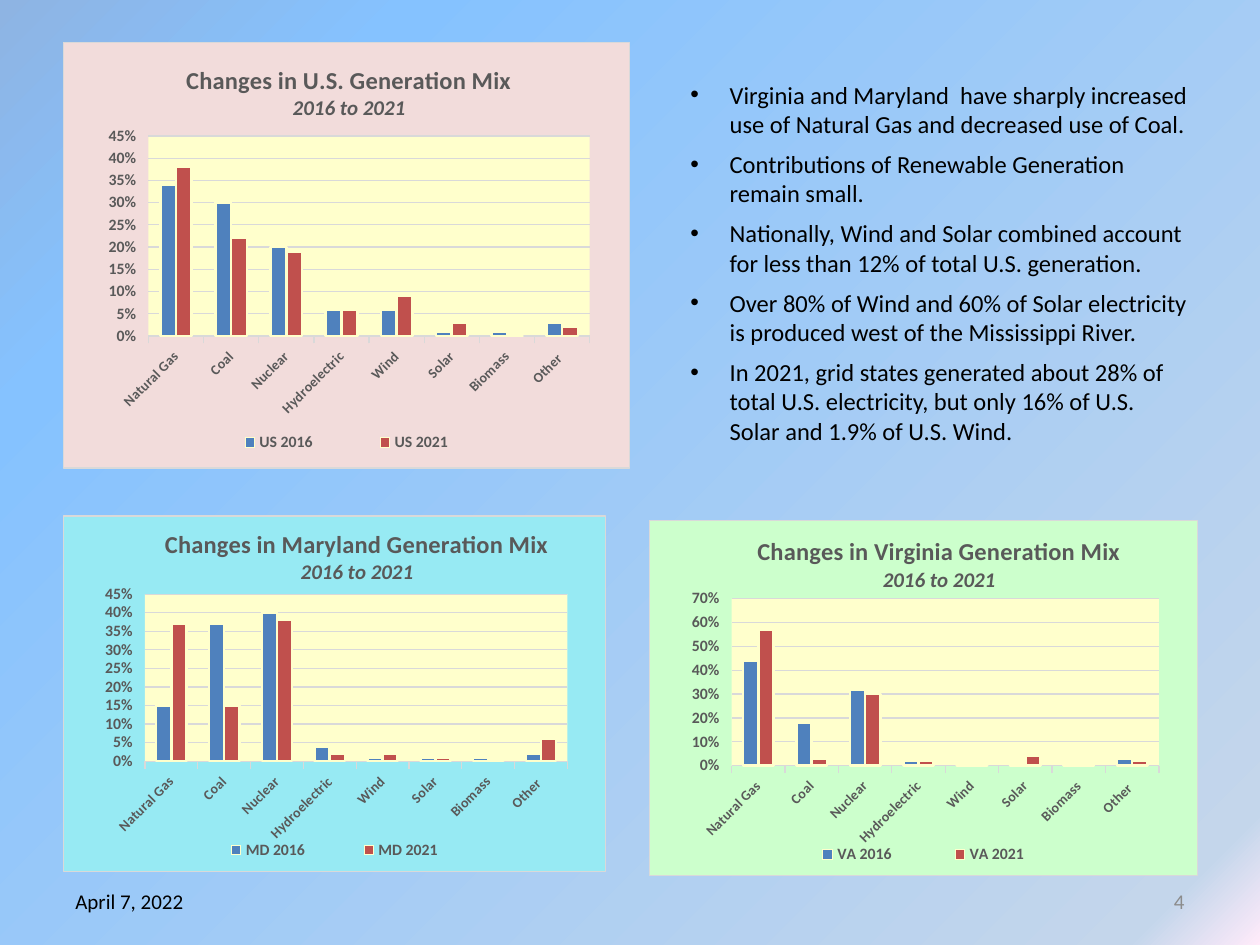
from typing import NamedTuple

from lxml import etree
from pptx import Presentation
from pptx.chart.data import CategoryChartData
from pptx.dml.color import RGBColor
from pptx.enum.chart import XL_CHART_TYPE, XL_LEGEND_POSITION, XL_TICK_MARK
from pptx.enum.text import MSO_ANCHOR, MSO_AUTO_SIZE, PP_ALIGN
from pptx.oxml import parse_xml
from pptx.oxml.ns import nsdecls, qn
from pptx.util import Cm, Pt

COLUMNS = XL_CHART_TYPE.COLUMN_CLUSTERED
LEGEND_BOTTOM = XL_LEGEND_POSITION.BOTTOM
TICK_OUT = XL_TICK_MARK.OUTSIDE
MIDDLE = MSO_ANCHOR.MIDDLE
GROW = MSO_AUTO_SIZE.SHAPE_TO_FIT_TEXT
LEFT, RIGHT = PP_ALIGN.LEFT, PP_ALIGN.RIGHT

FONT = "Calibri"
COLORS = {
    "text": "000000", "muted": "8C8C8C", "label": "595959", "rule": "D9D9D9",
    "plot": "FFFFCC", "before": "4F81BD", "after": "C0504D",
    "us": "F2DCDB", "maryland": "97EAF3", "virginia": "CCFFCC",
}
BACKGROUND = [(0, "8EB4E3"), (19, "85C2FF"), (94, "C4D6EB"), (100, "FFEBFA")]
SOURCES = ["Natural Gas", "Coal", "Nuclear", "Hydroelectric", "Wind", "Solar",
           "Biomass", "Other "]
BULLETS = [
    "Virginia and Maryland  have sharply increased use of Natural Gas and decreased use of Coal.",
    "Contributions of Renewable Generation remain small.",
    "Nationally, Wind and Solar combined account for less than 12% of total U.S. generation.",
    "Over 80% of Wind and 60% of Solar electricity is produced west of the Mississippi River.",
    "In 2021, grid states generated about 28% of total U.S. electricity, "
    "but only 16% of U.S. Solar and 1.9% of U.S. Wind.",
]


class Box(NamedTuple):
    """Left, top, width and height in centimetres."""
    x: float
    y: float
    w: float
    h: float

    def lengths(self) -> list:
        return [Cm(v) for v in self]


class MixChart(NamedTuple):
    region: str
    prefix: str
    box: Box
    fill: str
    title_at: tuple
    axis_max: float
    axis_step: float
    before: list
    after: list


CHARTS = [
    MixChart("U.S.", "US", Box(1.27, 0.84, 11.43, 8.61), "us", (0.21, 0.04), 0.45, 0.05,
             [0.34, 0.3, 0.2, 0.06, 0.06, 0.01, 0.01, 0.03],
             [0.38, 0.22, 0.19, 0.06, 0.09, 0.03, 0, 0.02]),
    MixChart("Maryland", "MD", Box(1.27, 10.39, 10.95, 7.19), "maryland", (0.18, 0.02), 0.45, 0.05,
             [0.15, 0.37, 0.4, 0.04, 0.01, 0.01, 0.01, 0.02],
             [0.37, 0.15, 0.38, 0.02, 0.02, 0.01, 0, 0.06]),
    MixChart("Virginia", "VA", Box(13.08, 10.48, 11.07, 7.19), "virginia", (0.19, 0.03), 0.7, 0.1,
             [0.44, 0.18, 0.32, 0.02, 0, 0, 0.01, 0.03],
             [0.57, 0.03, 0.3, 0.02, 0, 0.04, 0.01, 0.02]),
]


def rgb(name: str) -> RGBColor:
    return RGBColor.from_string(COLORS[name])


def style(font, size: float, color: str, bold: bool = False) -> None:
    font.name, font.size, font.bold = FONT, Pt(size), bold
    font.color.rgb = rgb(color)


def rule(line, color: str = "rule", width: float = 0.75) -> None:
    line.color.rgb = rgb(color)
    line.width = Pt(width)


def set_layout(parent, inner: bool = False, **fractions: float) -> None:
    """Place a chart part at fractions of the chart area."""
    for old in parent.findall(qn("c:layout")):
        parent.remove(old)
    layout = etree.Element(qn("c:layout"))
    manual = etree.SubElement(layout, qn("c:manualLayout"))
    if inner:
        etree.SubElement(manual, qn("c:layoutTarget")).set("val", "inner")
    for key in ("xMode", "yMode"):
        etree.SubElement(manual, qn(f"c:{key}")).set("val", "edge")
    for key, value in fractions.items():
        etree.SubElement(manual, qn(f"c:{key}")).set("val", str(value))
    overlay = parent.find(qn("c:overlay"))
    if overlay is None:
        parent.insert(0, layout)
    else:
        overlay.addprevious(layout)


def area_format(fill: str, border: str = ""):
    """Shape properties for a chart area or plot area."""
    line = f'<a:solidFill><a:srgbClr val="{border}"/></a:solidFill>' if border else "<a:noFill/>"
    return parse_xml(
        f'<c:spPr {nsdecls("c", "a")}><a:solidFill><a:srgbClr val="{fill}"/></a:solidFill>'
        f'<a:ln w="{Pt(0.75)}">{line}</a:ln></c:spPr>')


def add_mix_chart(s, mix: MixChart) -> None:
    data = CategoryChartData(number_format="0%")
    data.categories = SOURCES
    data.add_series(f"{mix.prefix} 2016", mix.before)
    data.add_series(f"{mix.prefix} 2021", mix.after)
    chart = s.shapes.add_chart(COLUMNS, *mix.box.lengths(), data).chart
    style(chart.font, 10, "text")

    # Title
    tf = chart.chart_title.text_frame
    tf.text = f"Changes in {mix.region} Generation Mix"
    style(tf.paragraphs[0].runs[0].font, 14, "label", True)
    r = tf.add_paragraph().add_run()
    r.text = "2016 to 2021"
    style(r.font, 12, "label", True)
    r.font.italic = True
    chart.chart_title.include_in_layout = False
    x, y = mix.title_at
    set_layout(chart.chart_title._element, x=x, y=y)

    # Columns
    plot = chart.plots[0]
    plot.gap_width, plot.overlap, plot.vary_by_categories = 150, 0, False
    for series, color in zip(plot.series, ("before", "after")):
        series.format.fill.solid()
        series.format.fill.fore_color.rgb = rgb(color)
        rule(series.format.line, "plot", 1.5)

    # Axes
    cat, val = chart.category_axis, chart.value_axis
    for axis, size in ((cat, 8), (val, 9)):
        axis.major_tick_mark = TICK_OUT
        style(axis.tick_labels.font, size, "label", True)
    rule(cat.format.line)
    cat._element.find(qn("c:txPr")).find(qn("a:bodyPr")).set("rot", "-2700000")
    val.minimum_scale, val.maximum_scale, val.major_unit = 0, mix.axis_max, mix.axis_step
    val.tick_labels.number_format = "0%"
    val.tick_labels.number_format_is_linked = False
    val.format.line.fill.background()
    rule(val.major_gridlines.format.line)

    # Legend
    chart.has_legend = True
    chart.legend.position = LEGEND_BOTTOM
    chart.legend.include_in_layout = False
    style(chart.legend.font, 9, "label", True)
    set_layout(chart.legend._element, x=0.21, y=0.9, w=0.58, h=0.08)

    # Backgrounds and plot position
    space = chart._chartSpace
    space.chart.addnext(area_format(COLORS[mix.fill], COLORS["rule"]))
    plot_area = space.chart.plotArea
    plot_area.append(area_format(COLORS["plot"]))
    set_layout(plot_area, inner=True, x=0.15, y=0.22, w=0.78, h=0.47)


def add_footer(s, text: str, box: Box, color: str, align) -> None:
    tf = s.shapes.add_textbox(*box.lengths()).text_frame
    tf.word_wrap, tf.vertical_anchor = True, MIDDLE
    tf.text = text
    p = tf.paragraphs[0]
    p.alignment = align
    style(p.runs[0].font, 12, color)


def add_bullets(s, items: list, box: Box) -> None:
    tf = s.shapes.add_textbox(*box.lengths()).text_frame
    tf.word_wrap, tf.auto_size = True, GROW
    tf.text = "\n".join(items)
    for p in tf.paragraphs:
        p.space_after = Pt(6)
        pr = p._p.get_or_add_pPr()
        pr.set("marL", str(Cm(0.79)))
        pr.set("indent", str(-Cm(0.79)))
        etree.SubElement(pr, qn("a:buFont")).set("typeface", "Arial")
        etree.SubElement(pr, qn("a:buChar")).set("char", "•")
        style(p.runs[0].font, 14, "text")


def set_background(s) -> None:
    fill = s.background.fill
    fill.gradient()
    stops = s._element.find(".//" + qn("a:gsLst"))
    stops.getparent().find(qn("a:lin")).set("ang", "2700000")
    for old in list(stops):
        stops.remove(old)
    for percent, color in BACKGROUND:
        stop = etree.SubElement(stops, qn("a:gs"), pos=str(percent * 1000))
        etree.SubElement(stop, qn("a:srgbClr"), val=color)


def main() -> None:
    prs = Presentation()
    prs.slide_width, prs.slide_height = Cm(25.4), Cm(19.05)
    s = prs.slides.add_slide(prs.slide_layouts[6])
    set_background(s)
    add_footer(s, "4", Box(18.21, 17.65, 5.92, 1.02), "muted", RIGHT)
    for mix in CHARTS:
        add_mix_chart(s, mix)
    add_bullets(s, BULLETS, Box(13.67, 1.48, 10.52, 7.7))
    add_footer(s, "April 7, 2022", Box(1.27, 17.65, 5.92, 1.02), "text", LEFT)
    prs.save("out.pptx")


if __name__ == "__main__":
    main()
